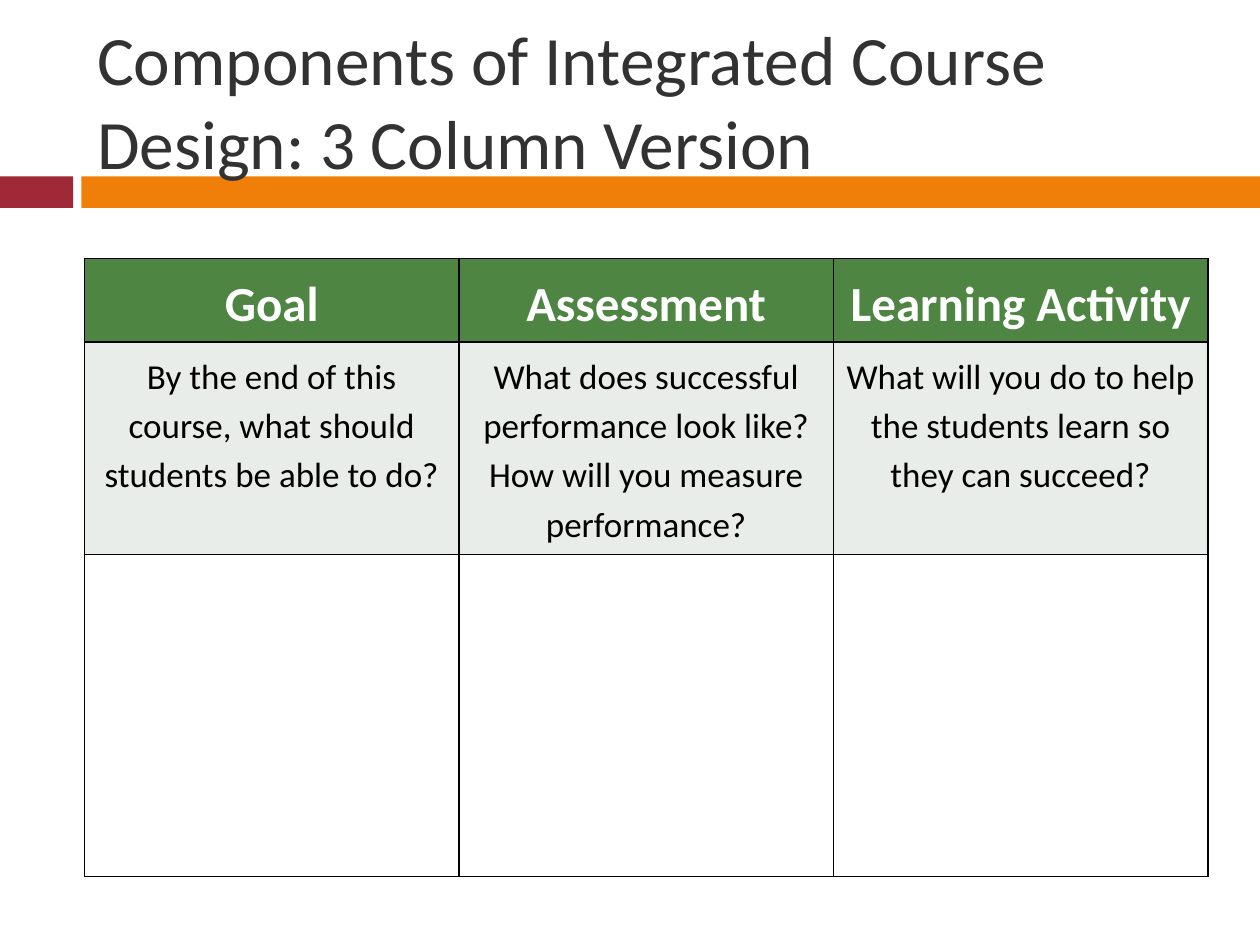
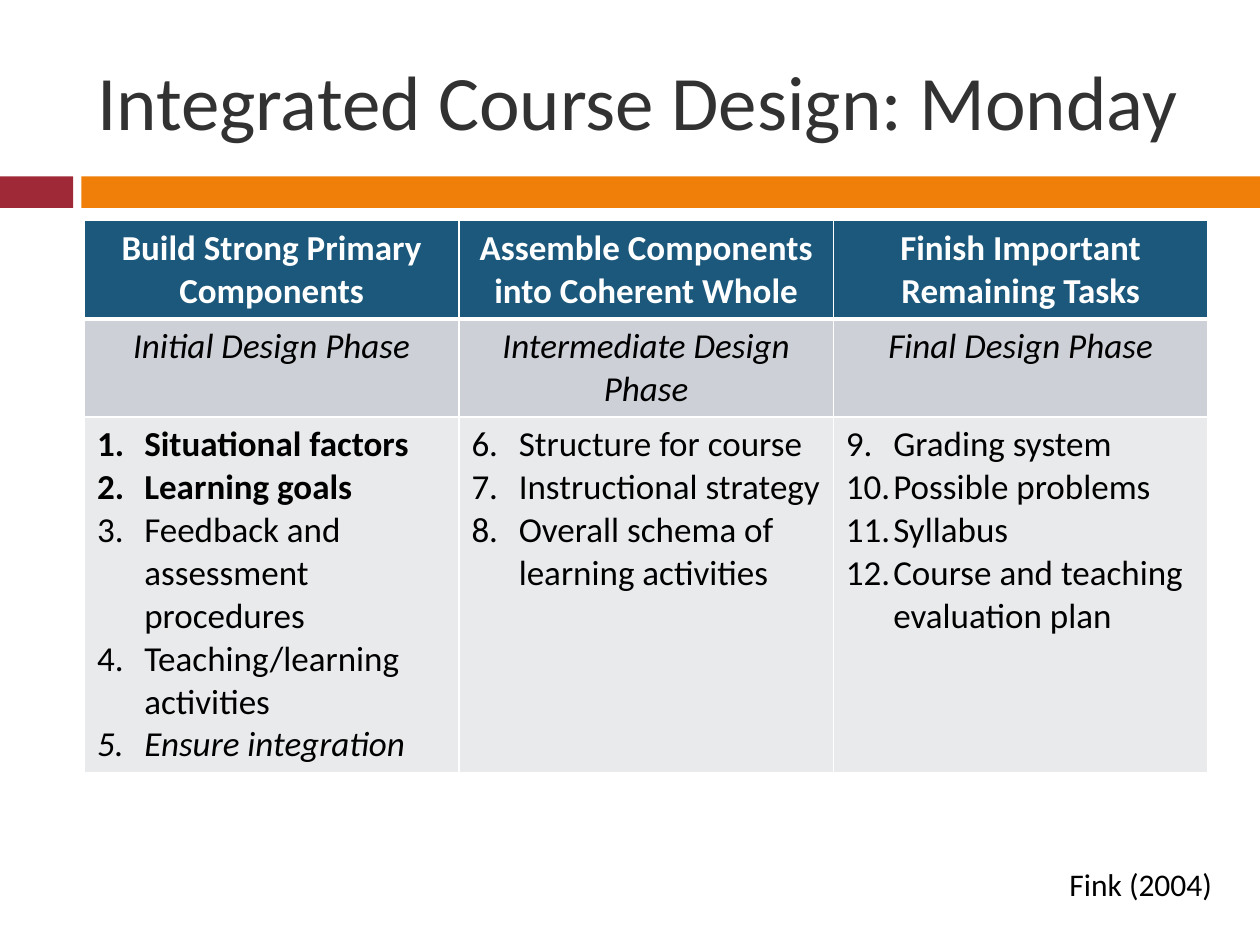
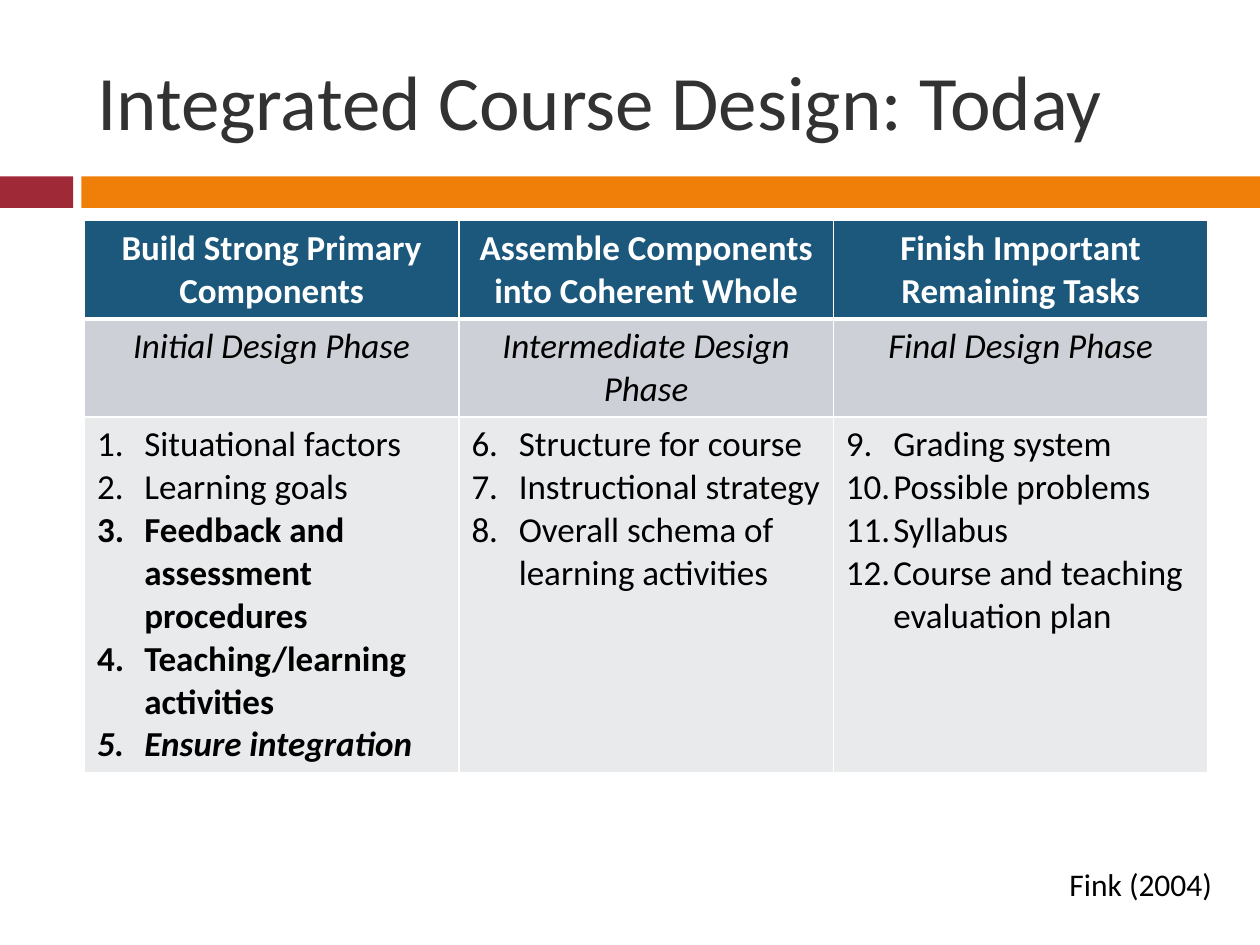
from lxml import etree
from pptx import Presentation
from pptx.dml.color import RGBColor
from pptx.enum.shapes import MSO_SHAPE
from pptx.enum.text import MSO_ANCHOR, MSO_AUTO_SIZE, PP_ALIGN
from pptx.oxml.ns import qn
from pptx.util import Pt

FONT = "Calibri"
BLACK, WHITE, TITLE_GREY = "000000", "FFFFFF", "323232"
RED, ORANGE = "9F2936", "F07F09"
GREEN, PALE_GREEN = "4E8542", "E9EDE9"
BLUE, MID_BLUE, PALE_BLUE = "1B587C", "CDD1D7", "E8EAEC"

TITLE_BOX = (48.24, 18, 642, 78)
BANDS = [((0, 100.8, 41.76, 18), RED), ((46.5, 100.8, 673.5, 18), ORANGE)]
COLUMNS = 3
NUMBER_INDENT = Pt(27)

PHASES = [
    ("Build Strong Primary Components", "Initial Design Phase",
     ["Situational factors", "Learning goals", "Feedback and assessment procedures",
      "Teaching/learning activities", "Ensure integration"]),
    ("Assemble Components into Coherent Whole", "Intermediate Design Phase",
     ["Structure for course", "Instructional strategy",
      "Overall schema of learning activities"]),
    ("Finish Important Remaining Tasks", "Final Design Phase",
     ["Grading system", "Possible problems", "Syllabus",
      "Course and teaching evaluation plan"]),
]
COMPONENTS = [
    ("Goal", "By the end of this course, what should students be able to do?"),
    ("Assessment", "What does successful performance look like? "
                   "How will you measure performance?"),
    ("Learning Activity", "What will you do to help the students learn "
                          "so they can succeed?"),
]


def rgb(value):
    return RGBColor.from_string(value)


def place(sp, box):
    sp.left, sp.top, sp.width, sp.height = map(Pt, box)


def set_font(p, size, color, bold=False, italic=False):
    f = p.font
    f.name, f.size, f.bold, f.italic = FONT, Pt(size), bold, italic
    f.color.rgb = rgb(color)


def add_base(prs, title, size):
    slide = prs.slides.add_slide(prs.slide_layouts[5])
    for box, color in BANDS:
        sp = slide.shapes.add_shape(MSO_SHAPE.RECTANGLE, *map(Pt, box))
        sp.shadow.inherit = False
        sp.fill.solid()
        sp.fill.fore_color.rgb = rgb(color)
        sp.line.fill.background()
    sp = slide.shapes.title
    sp.element.getparent().append(sp.element)
    place(sp, TITLE_BOX)
    tf = sp.text_frame
    tf.text = title
    tf.word_wrap = True
    tf.auto_size = MSO_AUTO_SIZE.NONE
    tf.vertical_anchor = MSO_ANCHOR.MIDDLE
    p = tf.paragraphs[0]
    p.alignment = PP_ALIGN.LEFT
    set_font(p, size, TITLE_GREY)
    return slide


def set_borders(cell, color, widths):
    tc_pr = cell._tc.get_or_add_tcPr()
    for i, (side, width) in enumerate(zip("LRTB", widths)):
        ln = etree.Element(qn(f"a:ln{side}"), w=str(Pt(width)))
        fill = etree.SubElement(ln, qn("a:solidFill"))
        etree.SubElement(fill, qn("a:srgbClr"), val=color)
        tc_pr.insert(i, ln)


def add_grid(slide, box, heights, fills, border, rules):
    frame = slide.shapes.add_table(len(heights), COLUMNS, *map(Pt, box), Pt(sum(heights)))
    table = frame.table
    table.first_row = table.horz_banding = False
    for column in table.columns:
        column.width = Pt(box[2] / COLUMNS)
    for r, (height, fill) in enumerate(zip(heights, fills)):
        table.rows[r].height = Pt(height)
        for cell in table.rows[r].cells:
            cell.fill.solid()
            cell.fill.fore_color.rgb = rgb(fill)
            set_borders(cell, border, (1, 1, rules[r], rules[r + 1]))
    return table


def write_centred(cell, text, size, color, spacing=None, **style):
    cell.text = text
    p = cell.text_frame.paragraphs[0]
    p.alignment = PP_ALIGN.CENTER
    if spacing:
        p.line_spacing = spacing
    set_font(p, size, color, **style)


def write_numbered(cell, items, start, bold_numbers, italic_numbers):
    tf = cell.text_frame
    tf.text = "\n".join(items)
    for number, p in enumerate(tf.paragraphs, start):
        p_pr = p._p.get_or_add_pPr()
        p_pr.set("marL", str(NUMBER_INDENT))
        p_pr.set("indent", str(-NUMBER_INDENT))
        etree.SubElement(p_pr, qn("a:buFont"), typeface="+mj-lt")
        etree.SubElement(p_pr, qn("a:buAutoNum"), type="arabicPeriod", startAt=str(start))
        set_font(p, 20, BLACK, number in bold_numbers, number in italic_numbers)


def add_components_table(slide, box):
    table = add_grid(slide, box, (47.5, 121, 184), (GREEN, PALE_GREEN, WHITE),
                     BLACK, (1, 1, 1, 1))
    for cell in table.iter_cells():
        cell.margin_left = cell.margin_right = Pt(5)
        cell.margin_top = cell.margin_bottom = Pt(4.3)
    for c, (heading, question) in enumerate(COMPONENTS):
        write_centred(table.cell(0, c), heading, 28, WHITE, 1.15, bold=True)
        write_centred(table.cell(1, c), question, 20, BLACK, 1.15)


def add_phases_table(slide, box, bold_numbers):
    table = add_grid(slide, box, (56, 56, 202.8), (BLUE, MID_BLUE, PALE_BLUE),
                     WHITE, (1, 3, 1, 1))
    start = 1
    for c, (heading, phase, steps) in enumerate(PHASES):
        write_centred(table.cell(0, c), heading, 20, WHITE, bold=True)
        write_centred(table.cell(1, c), phase, 20, BLACK, italic=True)
        write_numbered(table.cell(2, c), steps, start, bold_numbers, {5})
        start += len(steps)


def add_citation(slide, box):
    tf = slide.shapes.add_textbox(*map(Pt, box)).text_frame
    tf.word_wrap = False
    tf.auto_size = MSO_AUTO_SIZE.SHAPE_TO_FIT_TEXT
    tf.text = "Fink (2004)"
    set_font(tf.paragraphs[0], 18, BLACK)


def build_components_slide(prs):
    slide = add_base(prs, "Components of Integrated Course Design: 3 Column Version", 39.6)
    add_components_table(slide, (48.24, 147.6, 642))


def build_phases_slide(prs, day, bold_numbers):
    slide = add_base(prs, f"Integrated Course Design: {day}", 44)
    add_phases_table(slide, (48.24, 126, 642), bold_numbers)
    add_citation(slide, (604, 491, 97.2, 29))


def main():
    prs = Presentation()
    prs.slide_width, prs.slide_height = Pt(720), Pt(540)
    build_components_slide(prs)
    build_phases_slide(prs, "Monday", {1, 2})
    build_phases_slide(prs, "Today", {3, 4, 5})
    prs.save("out.pptx")


if __name__ == "__main__":
    main()
